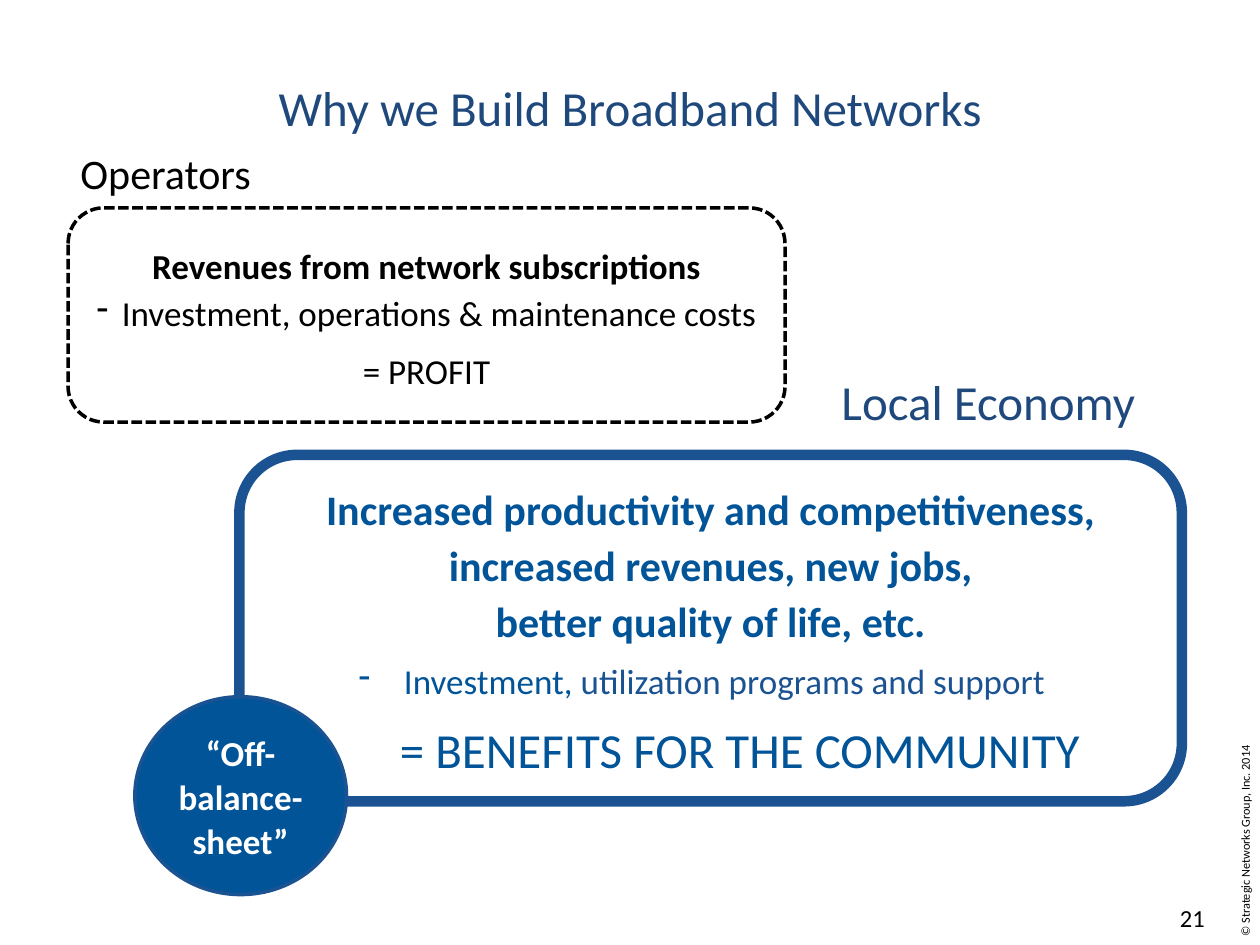
from pptx import Presentation
from pptx import util as u
from pptx.dml.color import RGBColor
from pptx.enum import dml, shapes, text
from pptx.oxml.xmlchemy import OxmlElement

COLORS = {"black": "000000", "white": "FFFFFF", "navy": "1F497D",
          "blue": "005497", "border": "1B5392"}
ALIGN = text.PP_ALIGN
MIDDLE = text.MSO_ANCHOR.MIDDLE


def rgb(name):
    """Return the named colour."""
    return RGBColor.from_string(COLORS[name])


def add_run(paragraph, words, size, color, bold=False):
    """Append one styled run."""
    run = paragraph.add_run()
    run.text = words
    run.font.name = "Calibri"
    run.font.size = u.Pt(size)
    run.font.bold = bold
    run.font.color.rgb = rgb(color)


def indent(paragraph, left, right=0, dash=False):
    """Set paragraph margins and, if asked, a hanging dash bullet."""
    properties = paragraph._p.get_or_add_pPr()
    properties.set("marL", str(u.Inches(left)))
    properties.set("marR", str(u.Inches(right)))
    if dash:
        properties.set("indent", str(u.Inches(-left)))
        bullet = OxmlElement("a:buChar")
        bullet.set("char", "-")
        properties.append(bullet)


def add_label(slide, box, words, size, color, align=ALIGN.LEFT, wrap=False,
              anchor=text.MSO_ANCHOR.TOP):
    """Place a single line of text in the box."""
    label = slide.shapes.add_textbox(*map(u.Inches, box))
    frame = label.text_frame
    frame.word_wrap = wrap
    frame.vertical_anchor = anchor
    frame.paragraphs[0].alignment = align
    add_run(frame.paragraphs[0], words, size, color)
    return label


def add_panel(slide, box, kind, line, width, fill=None):
    """Place an outlined shape and return it."""
    panel = slide.shapes.add_shape(kind, *map(u.Inches, box))
    panel.shadow.inherit = False
    if fill:
        panel.fill.solid()
        panel.fill.fore_color.rgb = rgb(fill)
    else:
        panel.fill.background()
    panel.line.color.rgb = rgb(line)
    panel.line.width = u.Pt(width)
    panel.text_frame.word_wrap = True
    panel.text_frame.vertical_anchor = MIDDLE
    return panel


def add_lines(frame, count, spacing):
    """Return centred paragraphs with a fixed line spacing."""
    lines = [frame.paragraphs[0]] + [frame.add_paragraph() for _ in range(count - 1)]
    for line in lines:
        line.alignment = ALIGN.CENTER
        line.line_spacing = u.Pt(spacing)
    return lines


def add_operators(slide, box):
    """Build the operators' profit equation with its heading."""
    left, top = box[:2]
    add_label(slide, (left, top - 0.53, 1.59, 0.5), "Operators", 24, "black")
    panel = add_panel(slide, box, shapes.MSO_SHAPE.ROUNDED_RECTANGLE, "black", 2)
    panel.line.dash_style = dml.MSO_LINE.SQUARE_DOT
    revenues, costs, profit = add_lines(panel.text_frame, 3, 27)
    add_run(revenues, "Revenues from network subscriptions", 20, "black", True)
    indent(costs, 0.2, dash=True)
    add_run(costs, "Investment, operations & maintenance costs", 20, "black")
    profit.space_before = u.Pt(6)
    add_run(profit, "= PROFIT", 20, "black")


def add_economy(slide, box):
    """Build the local economy's benefits equation with its heading."""
    left, top = box[:2]
    add_label(slide, (left + 4.68, top - 0.71, 2.59, 0.57), "Local Economy", 28, "navy")
    panel = add_panel(slide, box, shapes.MSO_SHAPE.ROUNDED_RECTANGLE,
                      "border", 6, "white")
    frame = panel.text_frame
    frame.margin_left = frame.margin_right = 0
    *gains, costs, benefits = add_lines(frame, 5, 32)
    gain_words = ("Increased productivity and competitiveness,",
                  "increased revenues, new jobs,",
                  "better quality of life, etc.")
    for gain, words in zip(gains, gain_words):
        add_run(gain, words, 24, "blue", True)
    indent(costs, 0.36, 0.14, dash=True)
    add_run(costs, "Investment, ", 20, "blue")
    add_run(costs, "utilization programs and support", 20, "border")
    indent(benefits, 0.46)
    benefits.space_before = u.Pt(12)
    add_run(benefits, "= BENEFITS FOR THE COMMUNITY", 28, "blue")


def add_badge(slide, box):
    """Build the round off-balance-sheet badge."""
    badge = add_panel(slide, box, shapes.MSO_SHAPE.OVAL, "border", 2, "blue")
    words, = add_lines(badge.text_frame, 1, 25)
    add_run(words, "“Off- balance-sheet”", 20, "white", True)


def add_footer(slide, copyright_box, number_box):
    """Build the sideways copyright line and the page number."""
    notice = add_label(slide, copyright_box, "© Strategic Networks Group, Inc. 2014",
                       7, "black", anchor=MIDDLE)
    notice.rotation = 270
    notice.text_frame.margin_left = u.Inches(0.06)
    add_label(slide, number_box, "21", 14, "black", ALIGN.RIGHT, True)


def main():
    """Build and save the slide."""
    deck = Presentation()
    deck.slide_width, deck.slide_height = u.Inches(10), u.Inches(7.5)
    slide = deck.slides.add_slide(deck.slide_layouts[6])
    add_footer(slide, (8.99, 6.47, 1.78, 0.26), (7.33, 7.12, 2.33, 0.4))
    add_operators(slide, (0.54, 1.65, 5.69, 1.7))
    add_economy(slide, (1.9, 3.61, 7.48, 2.75))
    add_label(slide, (0.5, 0.47, 9, 0.75), "Why we Build Broadband Networks",
              28, "navy", ALIGN.CENTER, True, MIDDLE)
    add_badge(slide, (1.07, 5.53, 1.68, 1.57))
    deck.save("out.pptx")


if __name__ == "__main__":
    main()
